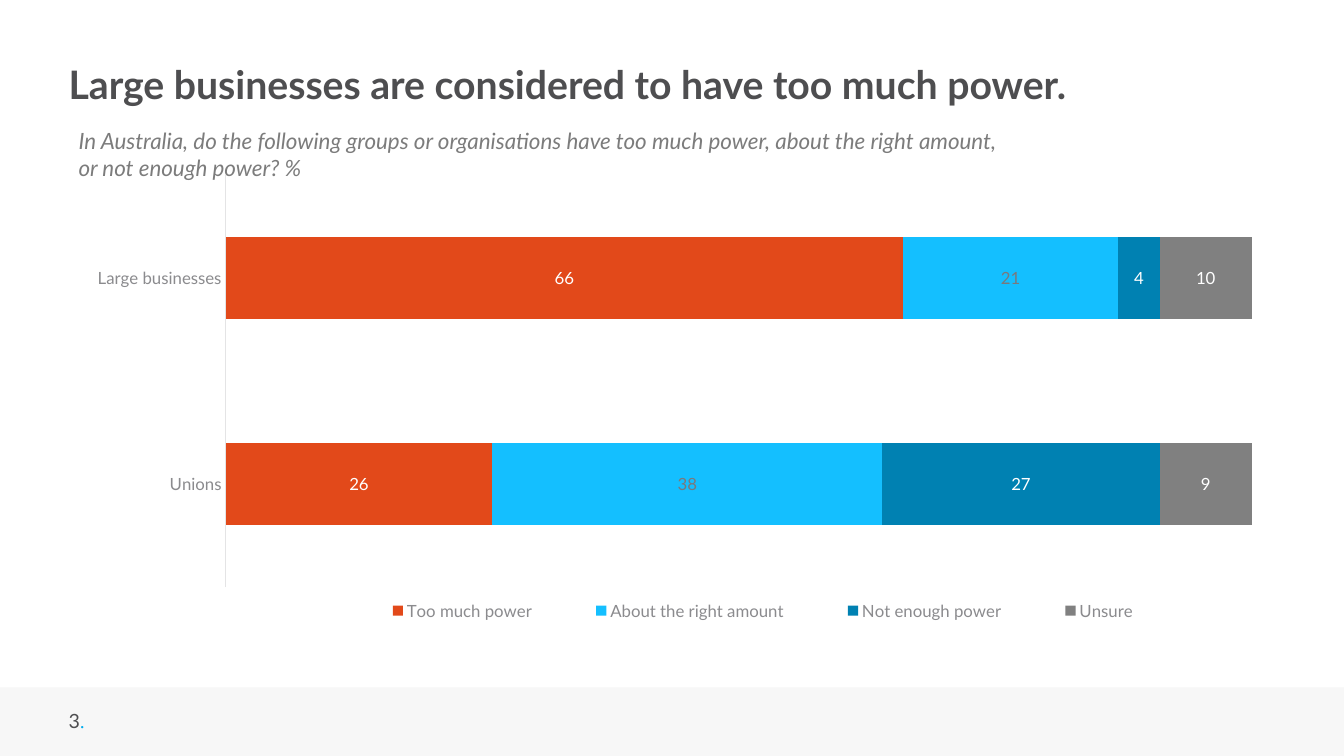
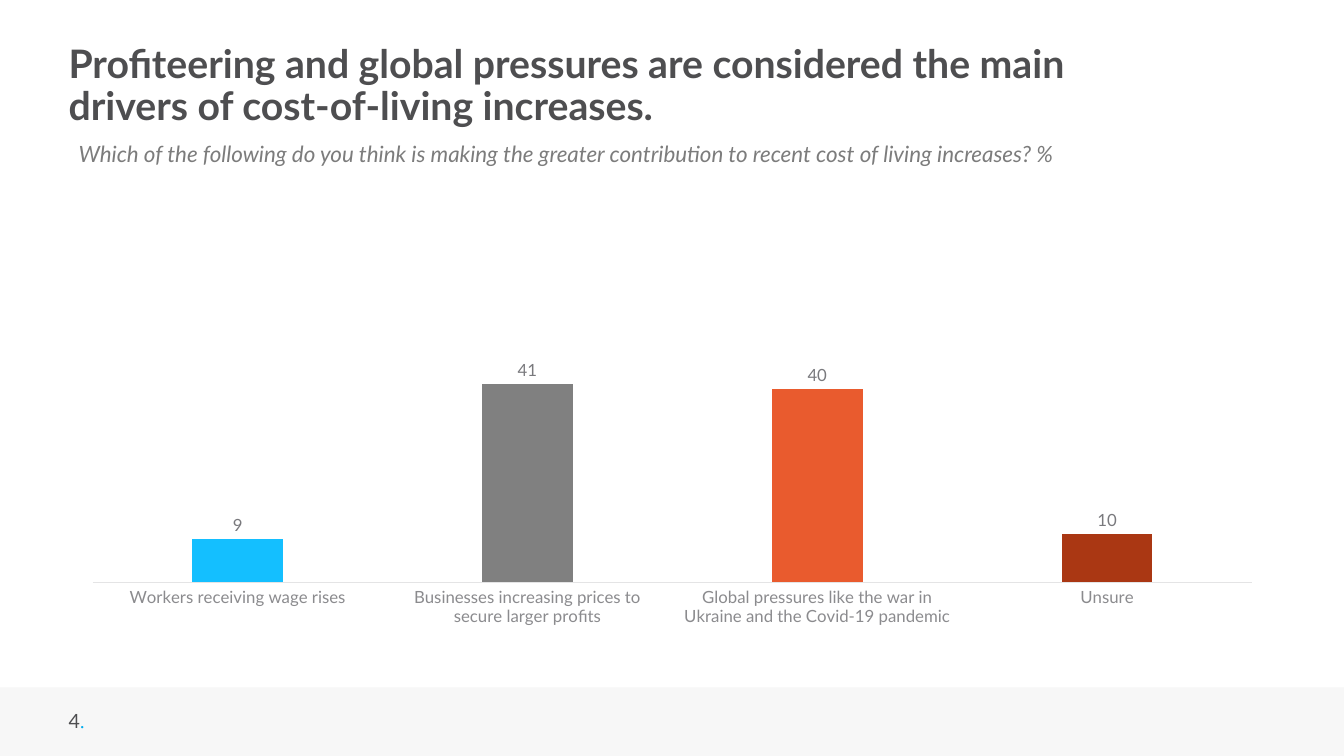
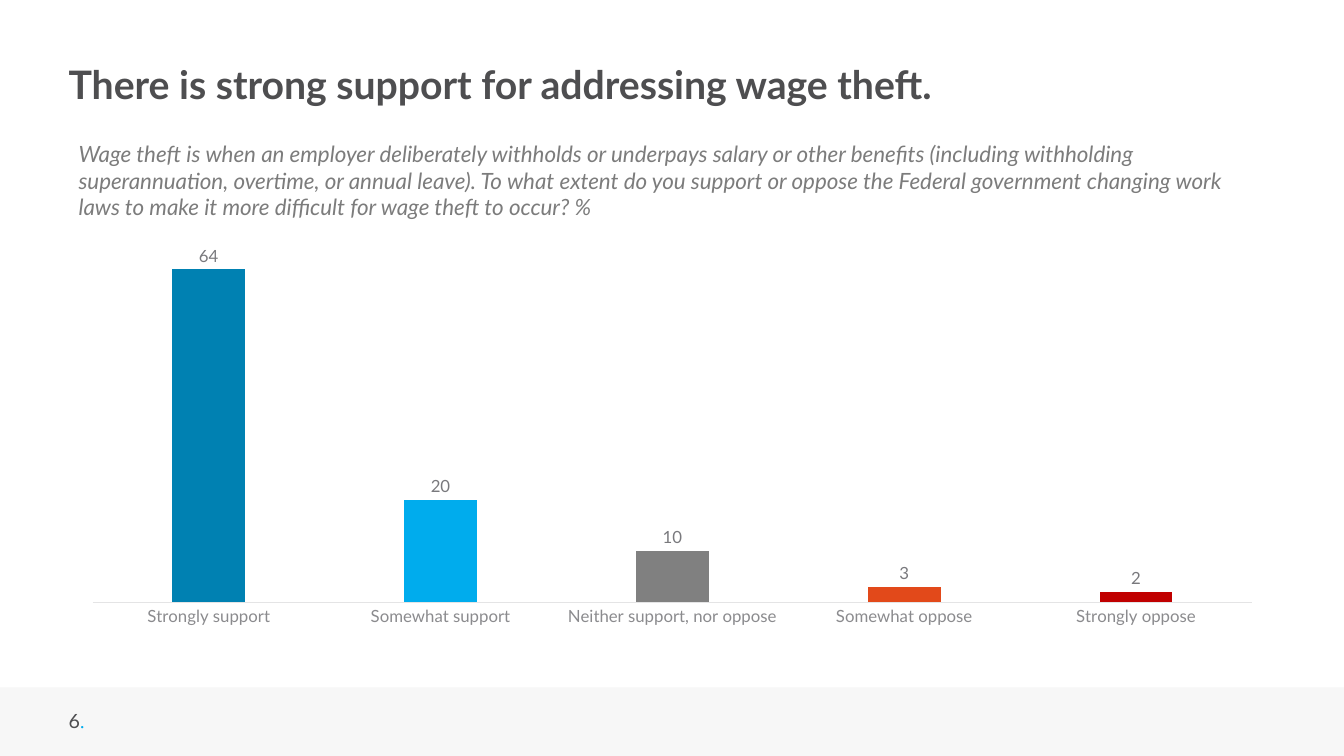
from dataclasses import dataclass
from typing import Any, Optional

from lxml import etree
from pptx import Presentation
from pptx.chart.data import CategoryChartData
from pptx.dml.color import RGBColor
from pptx.enum.chart import (
    XL_CHART_TYPE, XL_LABEL_POSITION, XL_LEGEND_POSITION, XL_TICK_MARK)
from pptx.enum.shapes import MSO_SHAPE
from pptx.enum.text import MSO_ANCHOR, MSO_AUTO_SIZE
from pptx.oxml.ns import qn
from pptx.util import Cm, Pt

STACK = XL_CHART_TYPE.BAR_STACKED
COLUMN = XL_CHART_TYPE.COLUMN_CLUSTERED
OUTER = XL_LABEL_POSITION.OUTSIDE_END
BOTTOM = XL_LEGEND_POSITION.BOTTOM
NO_TICK = XL_TICK_MARK.NONE
RECT = MSO_SHAPE.RECTANGLE
MIDDLE = MSO_ANCHOR.MIDDLE
GROW = MSO_AUTO_SIZE.SHAPE_TO_FIT_TEXT

WHITE = RGBColor(0xFF, 0xFF, 0xFF)
BAND = RGBColor(0xF7, 0xF7, 0xF7)
INK = RGBColor(0x4E, 0x4E, 0x50)
MUTED = RGBColor(0x7C, 0x7C, 0x7C)
LABEL = RGBColor(0x79, 0x79, 0x7D)
AXIS = RGBColor(0x8B, 0x8B, 0x8E)
RULE = RGBColor(0xE4, 0xE4, 0xE5)
ORANGE = RGBColor(0xE2, 0x49, 0x1A)
CORAL = RGBColor(0xE9, 0x5B, 0x2E)
RUST = RGBColor(0xAA, 0x37, 0x13)
RED = RGBColor(0xC0, 0x00, 0x00)
SKY = RGBColor(0x14, 0xBF, 0xFF)
CYAN = RGBColor(0x00, 0xAC, 0xED)
BLUE = RGBColor(0x00, 0x81, 0xB2)
GREY = RGBColor(0x80, 0x80, 0x80)

SANS = "Lato"
WIDE, HIGH = 33.87, 19.05
LEFT = 1.73
CHART_W, CHART_END = 30.43, 15.98
HEAD_MID = 2.19

TITLE = {"name": SANS, "size": Pt(28), "bold": True}
QUERY = {"name": SANS, "size": Pt(16), "italic": True}
PAGE = {"name": SANS, "size": Pt(14)}
DOT = {"name": "Times New Roman", "size": Pt(14)}
SMALL = {"name": SANS, "size": Pt(12)}
BASE = {"name": SANS, "size": Pt(10)}
FLUSH = {"margin_left": 0, "margin_top": 0,
         "margin_right": 0, "margin_bottom": 0}


@dataclass(frozen=True)
class Area:
    x: float
    y: float
    w: float
    h: float


@dataclass(frozen=True)
class Series:
    name: str
    values: tuple[int, ...]
    fill: RGBColor
    ink: RGBColor = LABEL
    points: tuple[RGBColor, ...] = ()


@dataclass(frozen=True)
class Graph:
    kind: Any
    top: float
    peak: int
    gap: int
    lap: int
    plot: Area
    groups: tuple[str, ...]
    series: tuple[Series, ...]
    key: Optional[Area] = None
    first: str = ""


@dataclass(frozen=True)
class Page:
    number: int
    title: str
    rows: int
    query: str
    top: float
    width: float
    lines: int
    graph: Graph


def apply(item: Any, values: dict[str, Any]) -> None:
    for name, value in values.items():
        setattr(item, name, value)


def style(font: Any, values: dict[str, Any], color: RGBColor) -> None:
    apply(font, values)
    font.color.rgb = color


def paint(item: Any, color: RGBColor) -> None:
    item.fill.solid()
    item.fill.fore_color.rgb = color


def write(slide: Any, area: Area, runs: list[tuple[str, dict, RGBColor]],
          frame: dict[str, Any]) -> Any:
    box = slide.shapes.add_textbox(
        Cm(area.x), Cm(area.y), Cm(area.w), Cm(area.h))
    text = box.text_frame
    apply(text, {"word_wrap": True, "auto_size": GROW} | frame)
    para = text.paragraphs[0]
    for words, values, color in runs:
        run = para.add_run()
        run.text = words
        style(run.font, values, color)
    return para


def place(parent: Any, index: int, area: Area, inner: bool) -> None:
    for old in parent.findall(qn("c:layout")):
        parent.remove(old)
    layout = etree.Element(qn("c:layout"))
    manual = etree.SubElement(layout, qn("c:manualLayout"))
    parts = [("layoutTarget", "inner")] if inner else []
    parts += [("xMode", "edge"), ("yMode", "edge")]
    parts += [(name, str(getattr(area, name))) for name in "xywh"]
    for name, value in parts:
        etree.SubElement(manual, qn(f"c:{name}")).set("val", value)
    parent.insert(index, layout)


def draw_graph(slide: Any, graph: Graph) -> None:
    data = CategoryChartData()
    data.categories = graph.groups
    for item in graph.series:
        data.add_series(item.name, item.values)
    chart = slide.shapes.add_chart(
        graph.kind, Cm(LEFT), Cm(graph.top), Cm(CHART_W),
        Cm(CHART_END - graph.top), data).chart
    apply(chart, {"has_title": False, "has_legend": graph.key is not None})
    style(chart.font, BASE, INK)
    apply(chart.value_axis, {
        "visible": False, "has_major_gridlines": False,
        "minimum_scale": 0, "maximum_scale": graph.peak})
    axis = chart.category_axis
    apply(axis, {"major_tick_mark": NO_TICK, "minor_tick_mark": NO_TICK,
                 "has_major_gridlines": False})
    style(axis.tick_labels.font, SMALL, AXIS)
    axis.format.line.color.rgb = RULE
    axis.format.line.width = Pt(0.75)
    plot = chart.plots[0]
    apply(plot, {"gap_width": graph.gap, "overlap": graph.lap,
                 "vary_by_categories": False})
    for item, bars in zip(graph.series, plot.series):
        paint(bars.format, item.fill)
        bars.invert_if_negative = False
        labels = bars.data_labels
        labels.show_value = True
        style(labels.font, SMALL, item.ink)
        if graph.kind == COLUMN:
            labels.position = OUTER
        for index, color in enumerate(item.points):
            paint(bars.points[index].format, color)
    if graph.first:
        label = plot.series[0].points[0].data_label
        run = label.text_frame.paragraphs[0].add_run()
        run.text = graph.first
        style(run.font, SMALL, LABEL)
        label.position = OUTER
    place(chart._chartSpace.find(".//" + qn("c:plotArea")), 0,
          graph.plot, True)
    if graph.key:
        legend = chart.legend
        apply(legend, {"position": BOTTOM, "include_in_layout": False})
        style(legend.font, SMALL, AXIS)
        place(legend._element, 1, graph.key, False)


def draw_page(deck: Any, page: Page) -> None:
    slide = deck.slides.add_slide(deck.slide_layouts[6])
    band = slide.shapes.add_shape(
        RECT, 0, Cm(17.32), Cm(WIDE), Cm(HIGH - 17.32))
    band.shadow.inherit = False
    paint(band, BAND)
    band.line.fill.background()
    write(slide, Area(LEFT, 17.86, 1.37, 0.61),
          [(str(page.number), PAGE, INK), (".", DOT, CYAN)], FLUSH)
    tall = 1.08 * page.rows
    head = write(slide, Area(LEFT, HEAD_MID - tall / 2, 26.16, tall),
                 [(page.title, TITLE, INK)],
                 FLUSH | {"vertical_anchor": MIDDLE})
    head.line_spacing = 0.9
    draw_graph(slide, page.graph)
    write(slide, Area(LEFT, page.top, page.width, 0.25 + 0.69 * page.lines),
          [(page.query, QUERY, MUTED)], {})


PAGES = (
    Page(3, "Large businesses are considered to have too much power.", 1,
         "In Australia, do the following groups or organisations have too "
         "much power, about the right amount, or not enough power? %",
         3.07, 24, 2,
         Graph(STACK, 4.17, 100, 150, 100, Area(0.13, 0.02, 0.85, 0.88),
               ("Unions", "Large businesses"),
               (Series("Too much power", (26, 66), ORANGE, WHITE),
                Series("About the right amount", (38, 21), SKY),
                Series("Not enough power", (27, 4), BLUE, WHITE),
                Series("Unsure", (9, 10), GREY, WHITE)),
               key=Area(0.22, 0.92, 0.71, 0.06))),
    Page(4, "Profiteering and global pressures are considered the main "
         "drivers of cost-of-living increases.", 2,
         "Which of the following do you think is making the greater "
         "contribution to recent cost of living increases? %",
         3.4, 30, 1,
         Graph(COLUMN, 5.94, 70, 219, -27, Area(0.02, 0.02, 0.96, 0.85),
               ("Workers receiving wage rises",
                "Businesses increasing prices to secure larger profits",
                "Global pressures like the war in Ukraine and the Covid-19 "
                "pandemic",
                "Unsure"),
               (Series("Series 1", (9, 41, 40, 10), ORANGE,
                       points=(SKY, GREY, CORAL, RUST)),))),
    Page(6, "There is strong support for addressing wage theft.", 1,
         "Wage theft is when an employer deliberately withholds or underpays "
         "salary or other benefits (including withholding superannuation, "
         "overtime, or annual leave). To what extent do you support or "
         "oppose the Federal government changing work laws to make it more "
         "difficult for wage theft to occur? %",
         3.4, 30, 3,
         Graph(COLUMN, 5.94, 70, 219, -27, Area(0.02, 0.02, 0.96, 0.9),
               ("Strongly support", "Somewhat support",
                "Neither support, nor oppose", "Somewhat oppose",
                "Strongly oppose"),
               (Series("Series 1", (65, 20, 10, 3, 2), ORANGE,
                       points=(BLUE, CYAN, GREY, ORANGE, RED)),),
               first="64")),
)


def main() -> None:
    deck = Presentation()
    apply(deck, {"slide_width": Cm(WIDE), "slide_height": Cm(HIGH)})
    for page in PAGES:
        draw_page(deck, page)
    deck.save("out.pptx")


if __name__ == "__main__":
    main()
